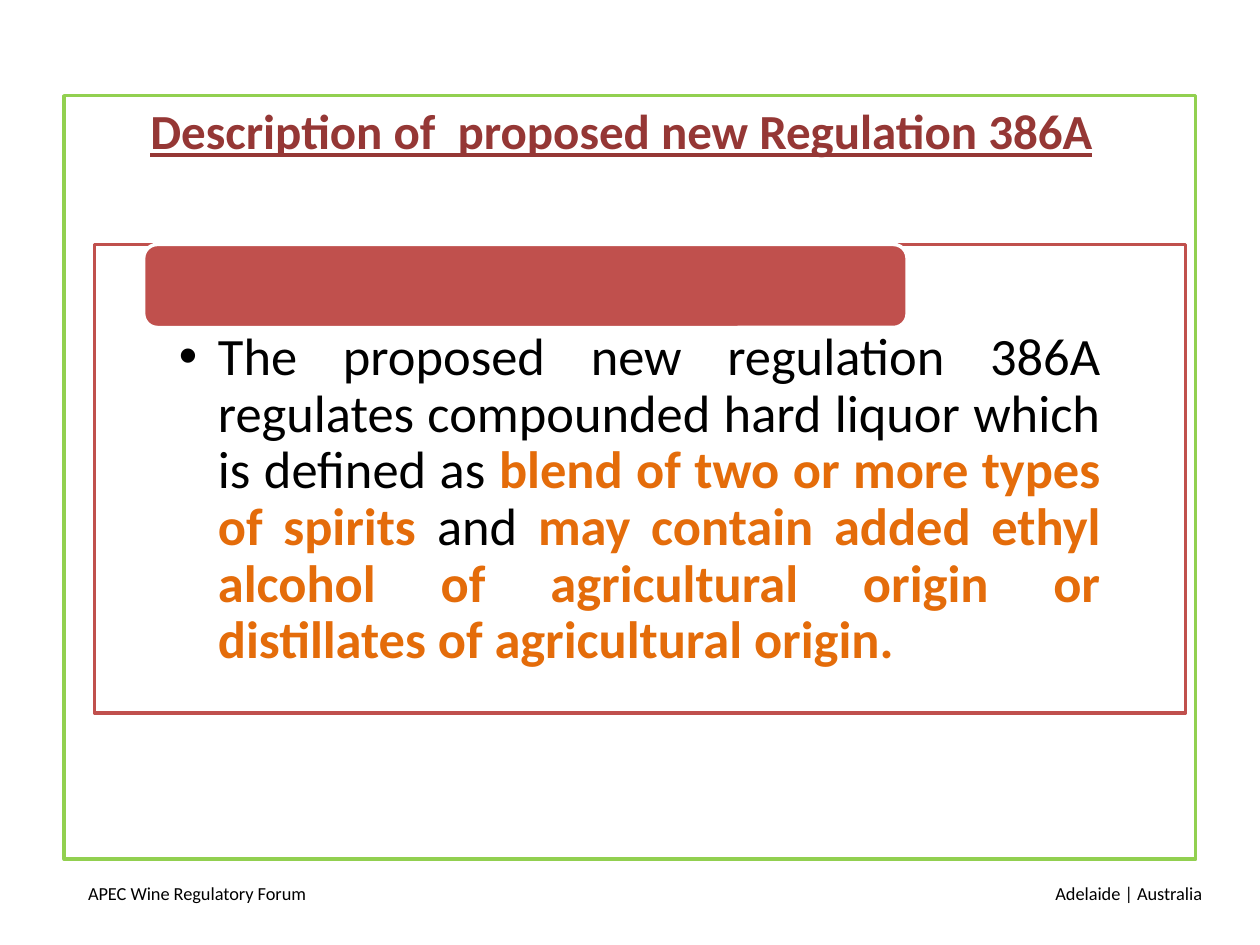
from dataclasses import dataclass

from lxml import etree
from pptx import Presentation
from pptx import util as u
from pptx.dml.color import RGBColor
from pptx.enum import shapes, text
from pptx.oxml.ns import qn


@dataclass(frozen=True)
class Theme:
    font: str = "Calibri"
    black: str = "000000"
    white: str = "FFFFFF"
    green: str = "92D050"
    red: str = "C0504D"
    dark_red: str = "953735"
    orange: str = "E46C0A"
    title_size: float = 28
    body_size: float = 30
    footer_size: float = 10.5
    line_width: float = 2


THEME = Theme()
REGULATION = [
    ("The proposed new regulation 386A regulates compounded hard liquor which is defined as ", False),
    ("blend of two or more types of spirits ", True),
    ("and ", False),
    ("may contain added ethyl alcohol of agricultural origin or distillates of agricultural origin.", True),
]


def place(shape, left, top, width, height):
    shape.left, shape.top = u.Inches(left), u.Inches(top)
    shape.width, shape.height = u.Inches(width), u.Inches(height)


def style_font(font, size, color, bold=False, underline=False):
    font.name = THEME.font
    font.size = u.Pt(size)
    font.bold = bold
    font.underline = underline
    font.color.rgb = RGBColor.from_string(color)


def style_box(shape, fill, line):
    if fill:
        shape.fill.solid()
        shape.fill.fore_color.rgb = RGBColor.from_string(fill)
    else:
        shape.fill.background()
    shape.line.color.rgb = RGBColor.from_string(line)
    shape.line.width = u.Pt(THEME.line_width)


def add_box(slide, kind, area, fill, line):
    box = slide.shapes.add_shape(kind, *map(u.Inches, area))
    box.shadow.inherit = False
    style_box(box, fill, line)


def add_footer(slide, left, words, alignment):
    box = slide.shapes.add_textbox(*map(u.Inches, (left, 6.95, 2.35, 0.4)))
    box.text_frame.word_wrap = True
    para = box.text_frame.paragraphs[0]
    para.text = words
    para.alignment = alignment
    style_font(para.runs[0].font, THEME.footer_size, THEME.black)


def set_title(title, words):
    place(title, 0.43, 0.68, 9, 0.71)
    frame = title.text_frame
    frame.text = words
    frame.auto_size = text.MSO_AUTO_SIZE.NONE
    frame.vertical_anchor = text.MSO_ANCHOR.MIDDLE
    para = frame.paragraphs[0]
    para.alignment = text.PP_ALIGN.CENTER
    style_font(para.runs[0].font, THEME.title_size, THEME.dark_red, True, True)


def set_bullet(para, indent):
    properties = para._p.get_or_add_pPr()
    properties.set("marL", str(u.Inches(indent)))
    properties.set("indent", str(-u.Inches(indent)))
    etree.SubElement(properties, qn("a:buChar"), char="•")


def set_body(body, spans):
    place(body, 0.75, 1.94, 8.66, 3.72)
    style_box(body, THEME.white, THEME.red)
    frame = body.text_frame
    frame.auto_size = text.MSO_AUTO_SIZE.NONE
    frame.vertical_anchor = text.MSO_ANCHOR.TOP
    frame.margin_left = frame.margin_right = u.Inches(0.67)
    frame.margin_top, frame.margin_bottom = u.Inches(0.68), u.Inches(0.23)
    para = frame.paragraphs[0]
    set_bullet(para, 0.31)
    para.alignment = text.PP_ALIGN.JUSTIFY
    para.line_spacing = 0.9
    para.space_before = u.Pt(0)
    for words, strong in spans:
        span = para.add_run()
        span.text = words
        color = THEME.orange if strong else THEME.black
        style_font(span.font, THEME.body_size, color, strong)


def main():
    deck = Presentation()
    deck.slide_width, deck.slide_height = u.Inches(10), u.Inches(7.5)
    slide = deck.slides.add_slide(deck.slide_layouts[1])
    set_title(slide.shapes.title, "Description of  proposed new Regulation 386A")
    set_body(slide.placeholders[1], REGULATION)
    kinds = shapes.MSO_SHAPE
    add_box(slide, kinds.RECTANGLE, (0.51, 0.76, 8.98, 6.06), None, THEME.green)
    add_box(slide, kinds.ROUNDED_RECTANGLE, (1.14, 1.94, 6.06, 0.66), THEME.red, THEME.white)
    add_footer(slide, 0.6, "APEC Wine Regulatory Forum", text.PP_ALIGN.LEFT)
    add_footer(slide, 7.29, "Adelaide | Australia", text.PP_ALIGN.RIGHT)
    deck.save("out.pptx")


if __name__ == "__main__":
    main()
